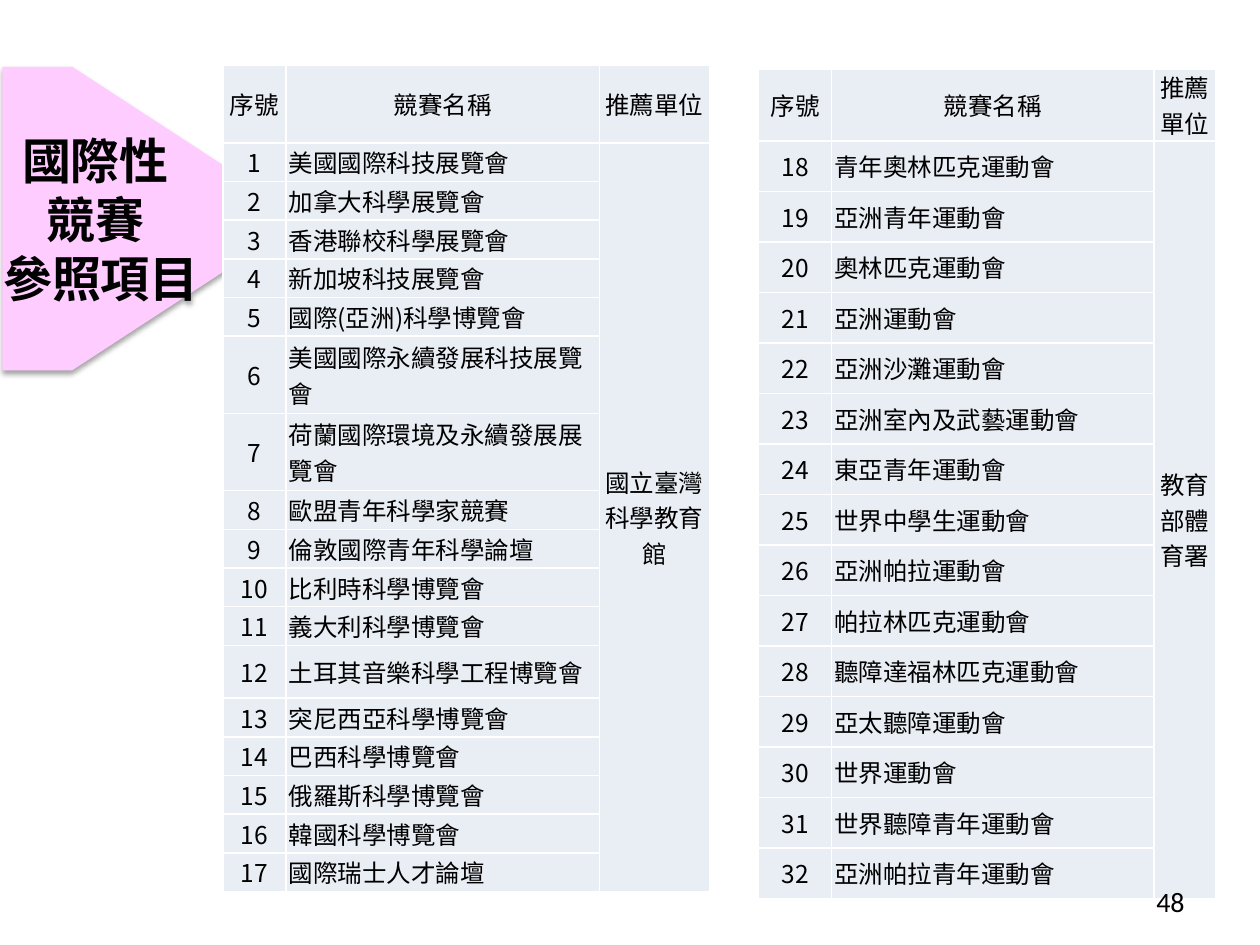
import lxml.etree
import pptx
import pptx.dml.color
import pptx.enum.shapes
import pptx.enum.text
import pptx.oxml
import pptx.oxml.ns
import pptx.util

RGBColor = pptx.dml.color.RGBColor
Align = pptx.enum.text.PP_ALIGN
Middle = pptx.enum.text.MSO_ANCHOR.MIDDLE
qn = pptx.oxml.ns.qn

BLACK = RGBColor(0x00, 0x00, 0x00)
WHITE = RGBColor(0xFF, 0xFF, 0xFF)
PINK = RGBColor(0xFF, 0xCC, 0xFF)
PALE_BLUE = RGBColor(0xE9, 0xED, 0xF4)

HEADINGS = ["序號", "競賽名稱", "推薦單位"]
SCIENCE = [
    "美國國際科技展覽會", "加拿大科學展覽會", "香港聯校科學展覽會", "新加坡科技展覽會",
    "國際(亞洲)科學博覽會", "美國國際永續發展科技展覽會", "荷蘭國際環境及永續發展展覽會",
    "歐盟青年科學家競賽", "倫敦國際青年科學論壇", "比利時科學博覽會", "義大利科學博覽會",
    "土耳其音樂科學工程博覽會", "突尼西亞科學博覽會", "巴西科學博覽會", "俄羅斯科學博覽會",
    "韓國科學博覽會", "國際瑞士人才論壇",
]
SPORTS = [
    "青年奧林匹克運動會", "亞洲青年運動會", "奧林匹克運動會", "亞洲運動會", "亞洲沙灘運動會",
    "亞洲室內及武藝運動會", "東亞青年運動會", "世界中學生運動會", "亞洲帕拉運動會",
    "帕拉林匹克運動會", "聽障達福林匹克運動會", "亞太聽障運動會", "世界運動會",
    "世界聽障青年運動會", "亞洲帕拉青年運動會",
]


class Deck:
    columns, rows = 100, 75
    title_font, table_font = "Calibri", "Noto Sans CJK SC"

    def __init__(self):
        self.prs = pptx.Presentation()
        self.prs.slide_width = pptx.util.Inches(10)
        self.prs.slide_height = pptx.util.Inches(7.5)
        self.s = self.prs.slides.add_slide(self.prs.slide_layouts[6])

    def x(self, columns):
        return round(self.prs.slide_width * columns / self.columns)

    def y(self, rows):
        return round(self.prs.slide_height * rows / self.rows)

    def box(self, left, top, width, height):
        return self.x(left), self.y(top), self.x(width), self.y(height)

    def set_text(self, tf, lines, font, size, align, bold=False):
        tf.text = "\n".join(lines)
        for p in tf.paragraphs:
            p.alignment = align
            p.font.name = font
            p.font.size = pptx.util.Pt(size)
            p.font.bold = bold
            p.font.color.rgb = BLACK

    def pentagon(self, lines, at, point):
        kind = pptx.enum.shapes.MSO_SHAPE.PENTAGON
        sp = self.s.shapes.add_shape(kind, *self.box(*at))
        sp.adjustments[0] = point
        sp.fill.solid()
        sp.fill.fore_color.rgb = PINK
        sp.line.fill.background()
        sp.shadow.inherit = False
        effects = sp._element.spPr.find(qn("a:effectLst"))
        shadow = lxml.etree.SubElement(
            effects, qn("a:outerShdw"), blurRad="40000", dist="23000",
            dir="5400000", rotWithShape="0")
        color = lxml.etree.SubElement(shadow, qn("a:srgbClr"), val=str(BLACK))
        lxml.etree.SubElement(color, qn("a:alpha"), val="35000")
        sp.text_frame.word_wrap = False
        sp.text_frame.vertical_anchor = Middle
        self.set_text(sp.text_frame, lines, self.title_font, 28, Align.CENTER, True)

    def borders(self, cell):
        tcPr = cell._tc.get_or_add_tcPr()
        for i, side in enumerate(("a:lnL", "a:lnR", "a:lnT", "a:lnB")):
            ln = lxml.etree.Element(qn(side), w=str(pptx.util.Pt(1)))
            fill = lxml.etree.SubElement(ln, qn("a:solidFill"))
            lxml.etree.SubElement(fill, qn("a:srgbClr"), val=str(WHITE))
            tcPr.insert(i, ln)

    def cell(self, cell, text, align):
        cell.margin_left = cell.margin_right = pptx.util.Inches(0.02)
        cell.margin_top = cell.margin_bottom = 0
        cell.vertical_anchor = Middle
        cell.fill.solid()
        cell.fill.fore_color.rgb = PALE_BLUE
        self.borders(cell)
        self.set_text(cell.text_frame, [text], self.table_font, 14, align)
        for p in cell.text_frame.paragraphs:
            latin = p.font._element.find(qn("a:latin"))
            ea = lxml.etree.Element(qn("a:ea"), typeface=self.table_font)
            latin.addnext(ea)

    def contest_table(self, left, top, widths, heights, first, names, unit):
        at = self.box(left, top, sum(widths), sum(heights))
        table = self.s.shapes.add_table(len(heights), len(widths), *at).table
        for column, width in zip(table.columns, widths):
            column.width = self.x(width)
        for row, height in zip(table.rows, heights):
            row.height = self.y(height)
        records = [HEADINGS]
        for i, name in enumerate(names):
            records.append([str(first + i), name, "" if i else unit])
        for r, record in enumerate(records):
            for c, text in enumerate(record):
                align = Align.LEFT if r and c == 1 else Align.CENTER
                self.cell(table.cell(r, c), text, align)
        table.cell(1, 2).merge(table.cell(len(names), 2))

    def page_number(self, text, at):
        tf = self.s.shapes.add_textbox(*self.box(*at)).text_frame
        tf.word_wrap = True
        tf.vertical_anchor = Middle
        self.set_text(tf, [text], self.title_font, 16, Align.RIGHT)


def main():
    deck = Deck()
    deck.pentagon(["國際性", "競賽", " 參照項目"], (0.2, 5.3, 24, 24.1), 0.77)

    line = 3.07
    science_rows = [2 * line] + [line] * len(SCIENCE)
    science_rows[6] = science_rows[7] = 2 * line
    science_rows[12] = 4.2
    deck.contest_table(17.7, 5.2, (5, 24.9, 8.7), science_rows,
                       1, SCIENCE, "國立臺灣科學教育館")

    sports_rows = [5.3] + [4.01] * len(SPORTS)
    deck.contest_table(60.2, 5.5, (5.8, 25.6, 4.9), sports_rows,
                       len(SCIENCE) + 1, SPORTS, "教育部體育署")

    deck.page_number("48", (71.7, 69.5, 23.3, 4))
    deck.prs.save("out.pptx")


if __name__ == "__main__":
    main()
